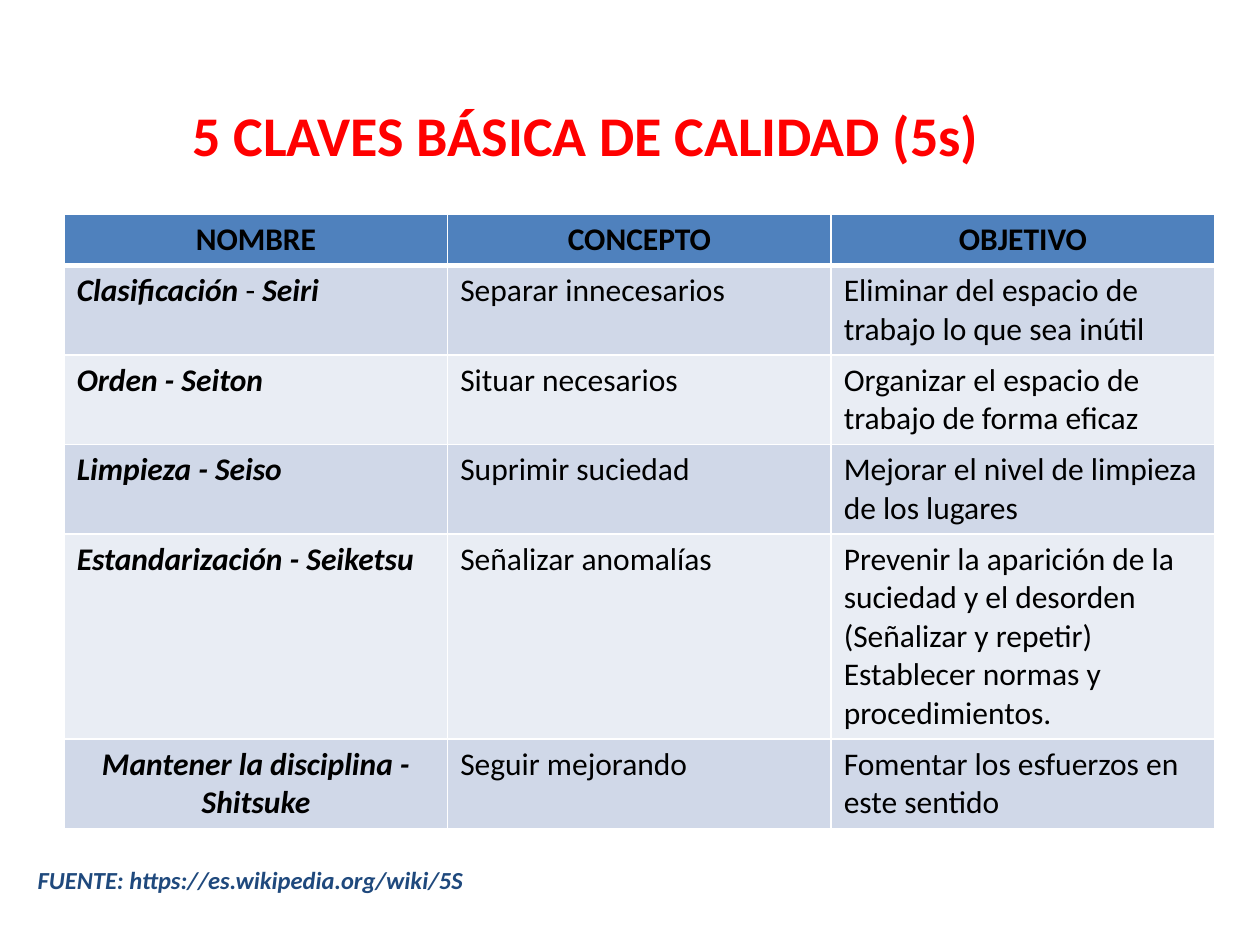
from pptx import Presentation
from pptx.dml.color import RGBColor
from pptx.enum.text import MSO_ANCHOR as Anchor, PP_ALIGN as Align
from pptx.oxml.ns import qn
from pptx.util import Pt
from lxml.etree import SubElement

RED = RGBColor(0xFF, 0x00, 0x00)
BLACK = RGBColor(0x00, 0x00, 0x00)
WHITE = RGBColor(0xFF, 0xFF, 0xFF)
NAVY = RGBColor(0x1F, 0x49, 0x7D)
HEADER_BLUE = RGBColor(0x4F, 0x81, 0xBD)
BANDS = [RGBColor(0xD0, 0xD8, 0xE8), RGBColor(0xE9, 0xED, 0xF4)]

HEADINGS = ["NOMBRE", "CONCEPTO", "OBJETIVO"]
KEYS = [
    ("Clasificación - Seiri", "Separar innecesarios",
     "Eliminar del espacio de trabajo lo que sea inútil"),
    ("Orden - Seiton", "Situar necesarios",
     "Organizar el espacio de trabajo de forma eficaz"),
    ("Limpieza - Seiso", "Suprimir suciedad",
     "Mejorar el nivel de limpieza de los lugares"),
    ("Estandarización - Seiketsu", "Señalizar anomalías",
     "Prevenir la aparición de la suciedad y el desorden (Señalizar y repetir) "
     "Establecer normas y procedimientos."),
    ("Mantener la disciplina - Shitsuke", "Seguir mejorando",
     "Fomentar los esfuerzos en este sentido"),
]
ROW_HEIGHTS = [29.2, 51.1, 51.1, 51.1, 117, 51.1]


def style_font(font, size, color, bold=False, italic=False):
    font.name = "Calibri"
    font.size = Pt(size)
    font.color.rgb = color
    font.bold = bold
    font.italic = italic


def place(part, left, top, width, height):
    part.left, part.top = Pt(left), Pt(top)
    part.width, part.height = Pt(width), Pt(height)


def add_title(slide, box):
    title = slide.shapes.title
    place(title, *box)
    frame = title.text_frame
    frame.text = "5 CLAVES BÁSICA DE CALIDAD (5s)"
    frame.vertical_anchor = Anchor.MIDDLE
    heading = frame.paragraphs[0]
    heading.alignment = Align.CENTER
    style_font(heading.runs[0].font, 32, RED, bold=True)


def set_borders(cell, top, bottom):
    properties = cell._tc.get_or_add_tcPr()
    widths = {"a:lnL": 1, "a:lnR": 1, "a:lnT": top, "a:lnB": bottom}
    for tag, width in widths.items():
        line = SubElement(properties, qn(tag), w=str(Pt(width)))
        fill = SubElement(line, qn("a:solidFill"))
        SubElement(fill, qn("a:srgbClr"), val=str(WHITE))


def fill_cell(cell, pieces, color, centered=False):
    paragraph = cell.text_frame.paragraphs[0]
    if centered:
        paragraph.alignment = Align.CENTER
    for words, bold, italic in pieces:
        run = paragraph.add_run()
        run.text = words
        style_font(run.font, 18, BLACK, bold, italic)
    cell.fill.solid()
    cell.fill.fore_color.rgb = color


def add_keys_table(slide, box):
    left, top, width, height = map(Pt, box)
    table = slide.shapes.add_table(
        len(KEYS) + 1, len(HEADINGS), left, top, width, height).table
    for row, row_height in zip(table.rows, ROW_HEIGHTS):
        row.height = Pt(row_height)

    for column, heading in enumerate(HEADINGS):
        cell = table.cell(0, column)
        set_borders(cell, 1, 3)
        fill_cell(cell, [(heading, True, False)], HEADER_BLUE, centered=True)

    for number, (name, concept, goal) in enumerate(KEYS, start=1):
        name_pieces = [(name, True, True)]
        if number == 1:
            first, second = name.split("- ")
            name_pieces = [(first, True, True), ("- ", False, False),
                           (second, True, True)]
        columns = [name_pieces, [(concept, False, False)],
                   [(goal, False, False)]]
        for column, pieces in enumerate(columns):
            cell = table.cell(number, column)
            set_borders(cell, 3 if number == 1 else 1, 1)
            fill_cell(cell, pieces, BANDS[(number - 1) % 2],
                      centered=column == 0 and number == len(KEYS))


def add_source(slide, box):
    source = slide.shapes.add_textbox(*map(Pt, box))
    frame = source.text_frame
    frame.word_wrap = True
    frame.text = "FUENTE: https://es.wikipedia.org/wiki/5S"
    style_font(frame.paragraphs[0].runs[0].font, 14, NAVY,
               bold=True, italic=True)


def main():
    deck = Presentation()
    deck.slide_width, deck.slide_height = Pt(720), Pt(540)
    slide = deck.slides.add_slide(deck.slide_layouts[5])
    slide.background.fill.solid()
    slide.background.fill.fore_color.rgb = WHITE
    add_title(slide, (36.7, 31.7, 596.2, 90))
    add_keys_table(slide, (36.7, 122.4, 657.4, sum(ROW_HEIGHTS)))
    add_source(slide, (14.4, 491, 686.2, 24.5))
    deck.save("out.pptx")


if __name__ == "__main__":
    main()
